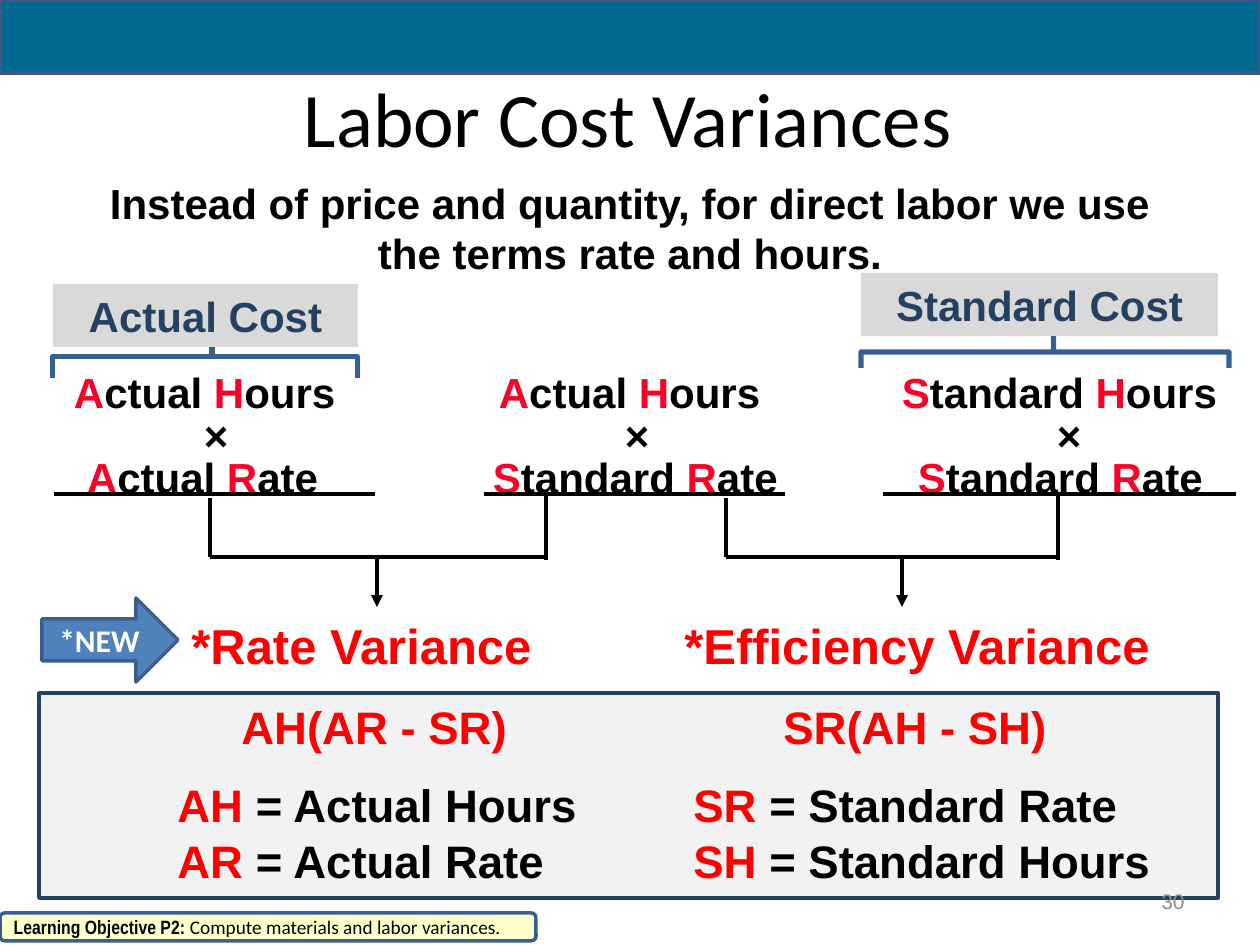
from dataclasses import dataclass

from lxml import etree
from pptx import Presentation
from pptx.dml.color import RGBColor
from pptx.enum.shapes import MSO_CONNECTOR, MSO_SHAPE
from pptx.enum.text import MSO_ANCHOR, PP_ALIGN
from pptx.oxml.ns import qn
from pptx.util import Pt

EMU_PER_PX = 914400 / 126


@dataclass(frozen=True)
class Theme:
    black: str = "000000"
    white: str = "FFFFFF"
    banner: str = "006991"
    banner_edge: str = "445583"
    initial: str = "FC0128"
    red: str = "FF0000"
    navy: str = "254061"
    brace: str = "376092"
    label: str = "D9D9D9"
    panel: str = "F2F2F2"
    arrow: str = "4F81BD"
    edge: str = "3A5F8C"
    note: str = "FFFFCC"
    grey: str = "8C8C8C"
    title_size: int = 44
    variance_size: int = 28
    formula_size: int = 26
    body_size: int = 24
    badge_size: int = 18
    number_size: int = 12
    note_size: int = 11


THEME = Theme()


def px(value):
    return round(value * EMU_PER_PX)


def style_run(run, size, color, font="Arial", bold=True):
    run.font.size = Pt(size)
    run.font.name = font
    run.font.bold = bold
    run.font.color.rgb = RGBColor.from_string(color)


def add_accented_runs(paragraph, text, size, accent):
    """Text between pairs of | takes the accent colour."""
    for index, part in enumerate(text.split("|")):
        if part:
            run = paragraph.add_run()
            run.text = part
            style_run(run, size, accent if index % 2 else THEME.black)


def set_text(shape, text, size, color, font="Arial", bold=True,
             align=PP_ALIGN.CENTER, anchor=MSO_ANCHOR.MIDDLE):
    frame = shape.text_frame
    frame.text = text
    frame.word_wrap = True
    frame.vertical_anchor = anchor
    paragraph = frame.paragraphs[0]
    paragraph.alignment = align
    style_run(paragraph.runs[0], size, color, font, bold)


def add_text(slide, box, text, size, color, **options):
    shape = slide.shapes.add_textbox(*map(px, box))
    set_text(shape, text, size, color, **options)
    return shape


def add_box(slide, kind, box, fill=None, line=None, width=2):
    shape = slide.shapes.add_shape(kind, *map(px, box))
    shape.shadow.inherit = False
    if fill:
        shape.fill.solid()
        shape.fill.fore_color.rgb = RGBColor.from_string(fill)
    else:
        shape.fill.background()
    if line:
        shape.line.color.rgb = RGBColor.from_string(line)
        shape.line.width = Pt(width)
    else:
        shape.line.fill.background()
    return shape


def add_line(slide, start, end, arrow=False):
    connector = slide.shapes.add_connector(
        MSO_CONNECTOR.STRAIGHT, *map(px, (*start, *end)))
    connector.line.color.rgb = RGBColor.from_string(THEME.black)
    connector.line.width = Pt(2.25)
    if arrow:
        tail = etree.SubElement(connector.line._get_or_add_ln(), qn("a:tailEnd"))
        tail.set("type", "triangle")
    etree.SubElement(connector._element.spPr, qn("a:effectLst"))


def add_cost_label(slide, text, label_box, brace_box):
    brace = add_box(slide, MSO_SHAPE.RIGHT_BRACE, brace_box, line=THEME.brace, width=3)
    brace.rotation = 270
    brace.adjustments[0] = 0
    brace.adjustments[1] = 0.523
    label = add_box(slide, MSO_SHAPE.RECTANGLE, label_box, THEME.label)
    set_text(label, text, THEME.body_size, THEME.navy)


def add_cost_column(slide, left, lines, indents, underline):
    shape = slide.shapes.add_textbox(px(left), px(375), px(330), px(122))
    frame = shape.text_frame
    frame.margin_left = frame.margin_top = frame.margin_right = frame.margin_bottom = 0
    frame.word_wrap = True
    for index, (line, indent) in enumerate(zip(lines, indents)):
        paragraph = frame.paragraphs[0] if index == 0 else frame.add_paragraph()
        paragraph.line_spacing = 0.84
        paragraph._p.get_or_add_pPr().set("marL", str(px(indent)))
        add_accented_runs(paragraph, line, THEME.body_size, THEME.initial)
    start, end = underline
    add_line(slide, (start, 494), (end, 494))


def add_variance(slide, left, right, arrow_x, text, text_box):
    add_line(slide, (left, 498), (left, 557))
    add_line(slide, (left, 557), (right, 557))
    add_line(slide, (right, 560), (right, 494))
    add_line(slide, (arrow_x, 559), (arrow_x, 607), arrow=True)
    add_text(slide, text_box, text, THEME.variance_size, THEME.red,
             align=PP_ALIGN.LEFT)


def add_tab_stops(paragraph, positions):
    tab_list = etree.SubElement(paragraph._p.get_or_add_pPr(), qn("a:tabLst"))
    for position in positions:
        tab = etree.SubElement(tab_list, qn("a:tab"))
        tab.set("pos", str(px(position)))
        tab.set("algn", "l")


def add_formula_panel(slide):
    panel = add_box(slide, MSO_SHAPE.RECTANGLE, (39, 693, 1179, 205),
                    THEME.panel, THEME.navy)
    frame = panel.text_frame
    frame.vertical_anchor = MSO_ANCHOR.TOP
    frame.word_wrap = True
    # Text, space before in points, tab stops
    rows = [
        ("|\tAH(AR - SR)\tSR(AH - SH)|", 0, (190, 732)),
        ("|\tAH |= Actual Hours|\tSR |= Standard Rate", 13, (126, 642)),
        ("|\tAR |= Actual Rate|\tSH |= Standard Hours", 1, (126, 642)),
    ]
    for index, (text, space, stops) in enumerate(rows):
        paragraph = frame.paragraphs[0] if index == 0 else frame.add_paragraph()
        paragraph.alignment = PP_ALIGN.LEFT
        paragraph.space_before = Pt(space)
        add_tab_stops(paragraph, stops)
        add_accented_runs(paragraph, text, THEME.formula_size, THEME.red)


def add_objective(slide):
    note = add_box(slide, MSO_SHAPE.ROUNDED_RECTANGLE, (0, 913, 536, 28),
                   THEME.note, THEME.edge)
    set_text(note, "Learning Objective P2: ", THEME.note_size, THEME.black,
             font="Arial Narrow", align=PP_ALIGN.LEFT)
    run = note.text_frame.paragraphs[0].add_run()
    run.text = "Compute materials and labor variances."
    style_run(run, THEME.note_size, THEME.black, "Calibri", False)


def main():
    presentation = Presentation()
    presentation.slide_width, presentation.slide_height = px(1260), px(945)
    slide = presentation.slides.add_slide(presentation.slide_layouts[6])

    # Banner
    add_box(slide, MSO_SHAPE.RECTANGLE, (0, 0, 1260, 73),
            THEME.banner, THEME.banner_edge, 2.25)

    # Cost columns
    add_cost_column(slide, 74, ("|A|ctual |H|ours", "×", "|A|ctual |R|ate"),
                    (0, 130, 13), (54, 375))
    add_cost_column(slide, 493, ("|A|ctual |H|ours", "×", "|S|tandard |R|ate"),
                    (6, 132, 0), (484, 785))
    add_cost_column(slide, 902, ("|S|tandard |H|ours", "×", "|S|tandard |R|ate"),
                    (0, 155, 16), (883, 1236))

    # Variances between neighbouring columns
    add_variance(slide, 210, 546, 377, "*Rate Variance", (179, 609, 410, 71))
    add_variance(slide, 726, 1058, 902, "*Efficiency Variance", (672, 609, 515, 71))

    # Formulas
    add_formula_panel(slide)

    # Title, page number and introduction
    add_text(slide, (40, 38, 1176, 158), "Labor Cost Variances",
             THEME.title_size, THEME.black, font="Calibri", bold=False)
    add_text(slide, (903, 876, 294, 50), "30", THEME.number_size, THEME.grey,
             bold=False, align=PP_ALIGN.RIGHT)
    add_text(slide, (84, 171, 1092, 115),
             "Instead of price and quantity, for direct labor we use "
             "the terms rate and hours.",
             THEME.body_size, THEME.black, anchor=MSO_ANCHOR.TOP)

    # Cost labels with braces
    add_cost_label(slide, "Actual Cost", (53, 284, 305, 63), (184, 204, 42, 305))
    add_cost_label(slide, "Standard Cost", (861, 273, 357, 63), (1029, 168, 32, 368))

    # Badge and learning objective
    badge = add_box(slide, MSO_SHAPE.RIGHT_ARROW, (42, 598, 136, 84),
                    THEME.arrow, THEME.edge)
    set_text(badge, "*NEW", THEME.badge_size, THEME.white, font="Calibri")
    add_objective(slide)

    presentation.save("out.pptx")


if __name__ == "__main__":
    main()
